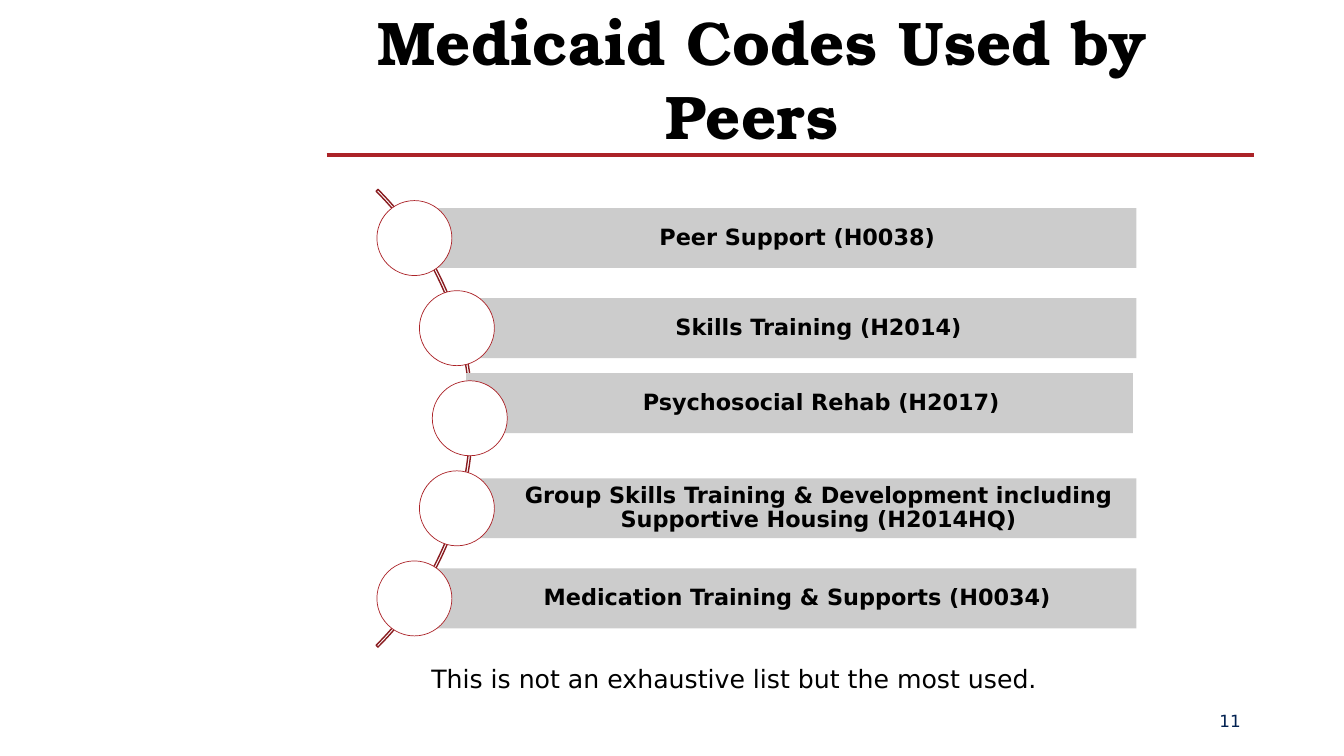
import math

from lxml import etree
from pptx import Presentation
from pptx.dml.color import RGBColor
from pptx.enum.shapes import MSO_CONNECTOR, MSO_SHAPE
from pptx.enum.text import MSO_ANCHOR, MSO_AUTO_SIZE, PP_ALIGN
from pptx.oxml.ns import qn
from pptx.util import Cm, Pt

STRAIGHT = MSO_CONNECTOR.STRAIGHT
ARC, BAR, DISC = MSO_SHAPE.BLOCK_ARC, MSO_SHAPE.RECTANGLE, MSO_SHAPE.OVAL
TOP, MIDDLE, BOTTOM = MSO_ANCHOR.TOP, MSO_ANCHOR.MIDDLE, MSO_ANCHOR.BOTTOM
LEFT, CENTER, RIGHT = PP_ALIGN.LEFT, PP_ALIGN.CENTER, PP_ALIGN.RIGHT
GROW = MSO_AUTO_SIZE.SHAPE_TO_FIT_TEXT

COLORS = {
    "red": "AB2328",
    "dark_red": "891C20",
    "gray": "CCCCCC",
    "white": "FFFFFF",
    "black": "000000",
    "navy": "022151",
}
TITLE_FONT = "TeX Gyre Bonum"
BODY_FONT = "DejaVu Sans"

SERVICES = [
    "Peer Support (H0038)",
    "Skills Training (H2014)",
    "Psychosocial Rehab (H2017)",
    "Group Skills Training & Development including Supportive Housing (H2014HQ)",
    "Medication Training & Supports (H0034)",
]
BAR_SHIFTS = {2: (-0.09, -0.38)}


def color(name):
    return RGBColor.from_string(COLORS[name])


def write(shape, text, size, font=BODY_FONT, ink="black", bold=False,
          align=LEFT, anchor=TOP):
    frame = shape.text_frame
    frame.word_wrap = True
    frame.vertical_anchor = anchor
    para = frame.paragraphs[0]
    para.text = text
    para.alignment = align
    para.font.name = font
    para.font.size = Pt(size)
    para.font.bold = bold
    para.font.color.rgb = color(ink)
    return para


def add_text(page, box, text, size, **style):
    shape = page.shapes.add_textbox(*map(Cm, box))
    write(shape, text, size, **style)
    return shape


def add_figure(page, kind, box, fill=None, line=None, width=0):
    shape = page.shapes.add_shape(kind, *map(Cm, box))
    shape.shadow.inherit = False
    if fill:
        shape.fill.solid()
        shape.fill.fore_color.rgb = color(fill)
    else:
        shape.fill.background()
    if line:
        shape.line.color.rgb = color(line)
        shape.line.width = Pt(width)
    else:
        shape.line.fill.background()
    return shape


def add_header(page, box):
    left, top, width, height = box
    add_text(page, box, "Medicaid Codes Used by Peers ", 44, font=TITLE_FONT,
             bold=True, align=CENTER, anchor=BOTTOM)
    rule_left, rule_right = left + 1.32, left + width + 0.08
    rule_y = top + height - 0.05
    rule = page.shapes.add_connector(
        STRAIGHT, Cm(rule_left), Cm(rule_y), Cm(rule_right), Cm(rule_y))
    rule.line.color.rgb = color("red")
    rule.line.width = Pt(3)
    etree.SubElement(rule._element.spPr, qn("a:effectLst"))


def add_service_bar(page, box, text):
    bar = add_figure(page, BAR, box, fill="gray")
    frame = bar.text_frame
    frame.margin_left = Cm(1.2)
    frame.margin_right = frame.margin_top = frame.margin_bottom = Cm(0.1)
    para = write(bar, text, 16, bold=True, align=CENTER, anchor=MIDDLE)
    para.line_spacing = 0.9


def add_service_arc(page, box):
    left, top, width, height = box
    pitch, bar_height, disc_size = 2.27, 1.51, 1.89
    arc_size, orbit = 16.31, 8.08
    center_x, center_y = left - 5.74, top + height / 2
    arc = add_figure(page, ARC, (center_x - arc_size / 2, center_y - arc_size / 2,
                                 arc_size, arc_size), line="dark_red", width=1)
    for index, value in enumerate((189, 27, 0.004)):
        arc.adjustments[index] = value

    for index, service in enumerate(SERVICES):
        offset = (index - (len(SERVICES) - 1) / 2) * pitch
        disc_x = center_x + math.sqrt(orbit ** 2 - offset ** 2)
        disc_y = center_y + offset
        shift_x, shift_y = BAR_SHIFTS.get(index, (0, 0))
        bar_box = (disc_x + shift_x, disc_y - bar_height / 2 + shift_y,
                   left + width - disc_x, bar_height)
        add_service_bar(page, bar_box, service)
        add_figure(page, DISC, (disc_x - disc_size / 2, disc_y - disc_size / 2,
                                disc_size, disc_size),
                   fill="white", line="red", width=0.5)


def add_footer(page, box):
    left, top, width, height = box
    note = add_text(page, (left, top, 17.07, 1.02),
                    "This is not an exhaustive list but the most used.", 18)
    note.text_frame.auto_size = GROW
    number_width, number_height = 5.69, 1.02
    add_text(page, (left + width - number_width, top + height - number_height,
                    number_width, number_height),
             "11", 12, ink="navy", align=RIGHT, anchor=MIDDLE)


def main():
    deck = Presentation()
    deck.slide_width, deck.slide_height = Cm(33.87), Cm(19.05)
    page = deck.slides.add_slide(deck.slide_layouts[6])
    add_header(page, (6.91, 0, 24.61, 3.96))
    add_service_arc(page, (9.5, 4.8, 19.14, 11.48))
    add_footer(page, (10.62, 16.59, 20.9, 2.08))
    deck.save("out.pptx")


if __name__ == "__main__":
    main()
